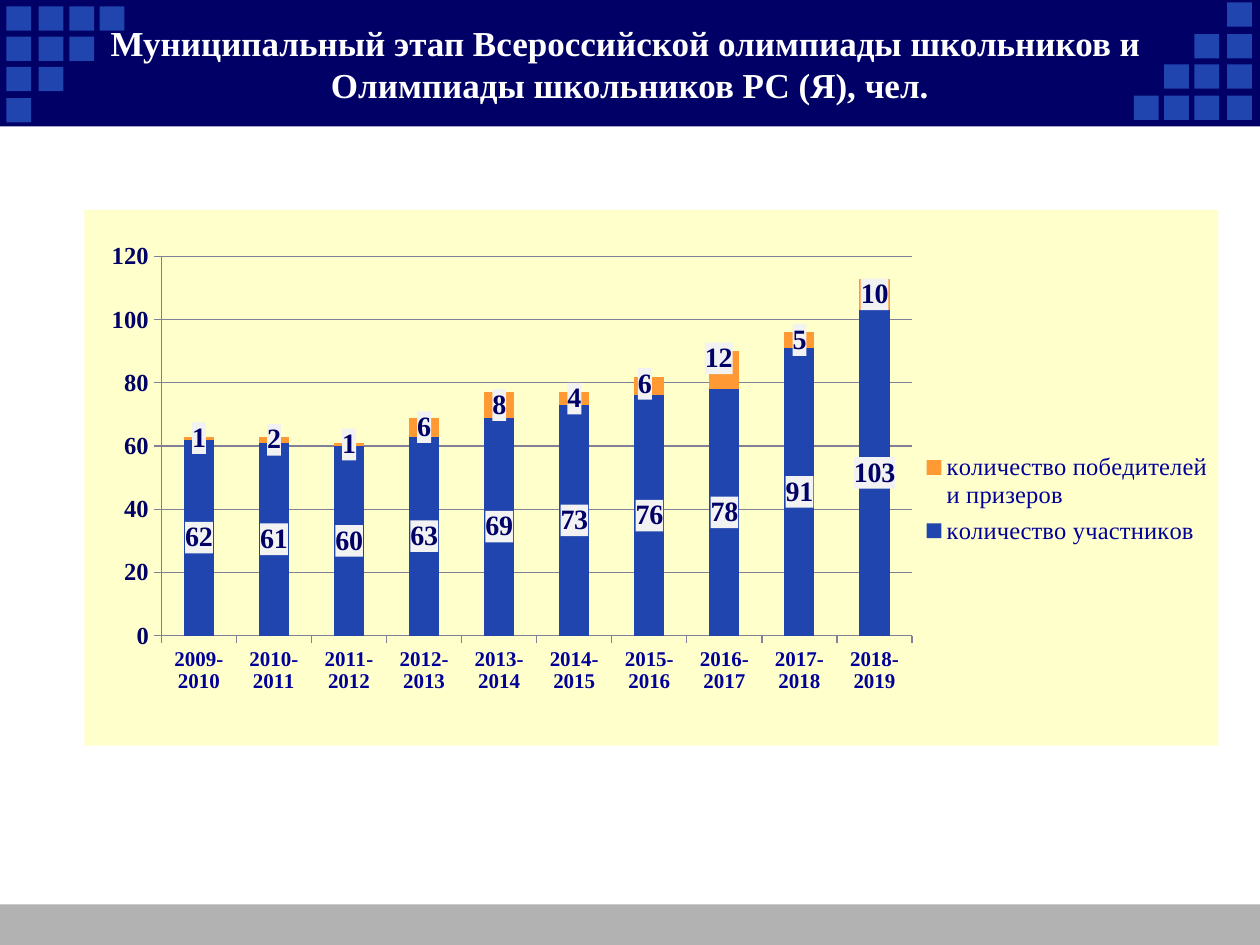
from copy import deepcopy

from lxml.etree import SubElement
from pptx import Presentation
from pptx.chart.data import CategoryChartData
from pptx.dml.color import RGBColor
from pptx.enum.chart import XL_CHART_TYPE, XL_LEGEND_POSITION, XL_TICK_MARK
from pptx.enum.shapes import MSO_SHAPE
from pptx.enum.text import MSO_ANCHOR, PP_ALIGN
from pptx.oxml import parse_xml
from pptx.oxml.ns import nsdecls, qn
from pptx.util import Cm, Pt

TITLE = ("Муниципальный этап Всероссийской олимпиады школьников и \v"
         "Олимпиады школьников РС (Я), чел.")
YEARS = [f"{year}-{year + 1}" for year in range(2009, 2019)]

NAVY = RGBColor(0x00, 0x00, 0x66)
BLUE = RGBColor(0x20, 0x45, 0xAE)
TEXT_BLUE = RGBColor(0x00, 0x00, 0x99)
ORANGE = RGBColor(0xFF, 0x99, 0x33)
CREAM = RGBColor(0xFF, 0xFF, 0xCC)
LABEL_GREY = RGBColor(0xF2, 0xF2, 0xF2)
LINE_GREY = RGBColor(0x80, 0x80, 0x99)
FOOTER_GREY = RGBColor(0xB2, 0xB2, 0xB2)
WHITE = RGBColor(0xFF, 0xFF, 0xFF)
FONT = "Times New Roman"

SERIES = [
    ("количество участников", BLUE, [62, 61, 60, 63, 69, 73, 76, 78, 91, 103]),
    ("количество победителей и призеров", ORANGE, [1, 2, 1, 6, 8, 4, 6, 12, 5, 10]),
]
WINNER_LABEL_SHIFTS = {6: (-0.004, -0.004), 7: (-0.005, -0.022)}
PLOT_LAYOUT = (0.068, 0.087, 0.662, 0.708)
LEGEND_LAYOUT = (0.74, 0.44, 0.26, 0.2)

SQUARE_WIDTH, SQUARE_HEIGHT = 0.5, 0.49
LEFT_COLUMNS, LEFT_ROWS = (0.13, 0.78, 1.4, 2.01), (0.13, 0.74, 1.35, 1.98)
RIGHT_COLUMNS, RIGHT_ROWS = (24.74, 24.08, 23.47, 22.86), (1.93, 1.3, 0.69, 0.05)
ROW_LENGTHS = (4, 3, 2, 1)


def format_font(font, size, color=NAVY, bold=False, name=FONT):
    font.size, font.bold, font.name = Pt(size), bold, name
    font.color.rgb = color


def write_text(shape, text, align=PP_ALIGN.CENTER, anchor=MSO_ANCHOR.MIDDLE, **font_format):
    frame = shape.text_frame
    frame.word_wrap = True
    frame.vertical_anchor = anchor
    frame.text = text
    para = frame.paragraphs[0]
    para.alignment = align
    for span in para.runs:
        format_font(span.font, **font_format)


def add_rectangle(slide, left, top, width, height, color):
    box = slide.shapes.add_shape(
        MSO_SHAPE.RECTANGLE, Cm(left), Cm(top), Cm(width), Cm(height))
    box.shadow.inherit = False
    box.fill.solid()
    box.fill.fore_color.rgb = color
    box.line.fill.background()


def add_squares(slide, columns, rows):
    for top, length in zip(rows, ROW_LENGTHS):
        for left in columns[:length]:
            add_rectangle(slide, left, top, SQUARE_WIDTH, SQUARE_HEIGHT, BLUE)


def solid_properties(color):
    """Return chart shape properties with a solid fill and no line."""
    return parse_xml(
        f'<c:spPr {nsdecls("c", "a")}><a:solidFill><a:srgbClr val="{color}"/></a:solidFill>'
        "<a:ln><a:noFill/></a:ln></c:spPr>")


def manual_layout(values, names=("x", "y", "w", "h"), modes=("xMode", "yMode"), target=None):
    layout = parse_xml(f'<c:layout {nsdecls("c")}><c:manualLayout/></c:layout>')
    settings = [("layoutTarget", target)] if target else []
    settings += [(mode, "edge") for mode in modes]
    settings += list(zip(names, values))
    for name, value in settings:
        SubElement(layout[0], qn(f"c:{name}")).set("val", str(value))
    return layout


def set_layout(parent, layout, before):
    for old in parent.findall(qn("c:layout")):
        parent.remove(old)
    parent.find(qn(f"c:{before}")).addprevious(layout)


def format_labels(series, shifts):
    """Show boxed values; move the labels of the points in shifts."""
    labels = series.data_labels
    labels.show_value = True
    format_font(labels.font, 16, bold=True)
    element = labels._element
    text_properties = element.find(qn("c:txPr"))
    text_properties.addprevious(solid_properties(LABEL_GREY))
    for position, (index, shift) in enumerate(shifts.items()):
        label = parse_xml(f'<c:dLbl {nsdecls("c")}><c:idx val="{index}"/></c:dLbl>')
        label.append(manual_layout(shift, modes=()))
        label.append(solid_properties(LABEL_GREY))
        label.append(deepcopy(text_properties))
        for name in ("LegendKey", "Val", "CatName", "SerName", "Percent", "BubbleSize"):
            SubElement(label, qn(f"c:show{name}")).set("val", str(int(name == "Val")))
        element.insert(position, label)


def format_axis(axis, size, color):
    axis.major_tick_mark = XL_TICK_MARK.OUTSIDE
    axis.format.line.color.rgb = LINE_GREY
    axis.format.line.width = Pt(0.75)
    format_font(axis.tick_labels.font, size, color, bold=True)


def add_olympiad_chart(slide):
    data = CategoryChartData()
    data.categories = YEARS
    for name, _, values in SERIES:
        data.add_series(name, values)
    chart = slide.shapes.add_chart(
        XL_CHART_TYPE.COLUMN_STACKED, Cm(1.7), Cm(4.23), Cm(22.86), Cm(10.8), data).chart
    chart.has_title = False
    format_font(chart.font, 18, name="Arial")
    chart._chartSpace.find(qn("c:txPr")).addprevious(solid_properties(CREAM))

    plot = chart.plots[0]
    plot.gap_width, plot.overlap, plot.vary_by_categories = 150, 100, False
    for series, (_, color, _), shifts in zip(plot.series, SERIES, ({}, WINNER_LABEL_SHIFTS)):
        series.format.fill.solid()
        series.format.fill.fore_color.rgb = color
        format_labels(series, shifts)

    format_axis(chart.category_axis, 12, TEXT_BLUE)
    format_axis(chart.value_axis, 14, NAVY)
    chart.value_axis.minimum_scale, chart.value_axis.maximum_scale = 0, 120
    chart.value_axis.major_unit = 20
    grid_line = chart.value_axis.major_gridlines.format.line
    grid_line.color.rgb = LINE_GREY
    grid_line.width = Pt(0.75)

    chart.has_legend = True
    chart.legend.position = XL_LEGEND_POSITION.RIGHT
    chart.legend.include_in_layout = False
    format_font(chart.legend.font, 14, TEXT_BLUE)
    set_layout(chart.legend._element, manual_layout(LEGEND_LAYOUT), "overlay")
    plot_area = chart._chartSpace.chart.plotArea
    set_layout(plot_area, manual_layout(PLOT_LAYOUT, target="inner"), "barChart")


def main():
    deck = Presentation()
    deck.slide_width, deck.slide_height = Cm(25.4), Cm(19.05)
    slide = deck.slides.add_slide(deck.slide_layouts[5])
    add_rectangle(slide, 0, 18.23, 25.4, 0.82, FOOTER_GREY)
    add_rectangle(slide, 0, 0, 25.4, 2.55, NAVY)
    add_squares(slide, LEFT_COLUMNS, LEFT_ROWS)
    add_squares(slide, RIGHT_COLUMNS, RIGHT_ROWS)
    add_olympiad_chart(slide)

    title = slide.shapes.title
    title.left, title.top, title.width, title.height = Cm(0), Cm(0), Cm(25.4), Cm(2.54)
    write_text(title, TITLE, size=20, color=WHITE, bold=True)
    slide.shapes._spTree.append(title._element)  # bring the title above the band
    deck.save("out.pptx")


if __name__ == "__main__":
    main()
